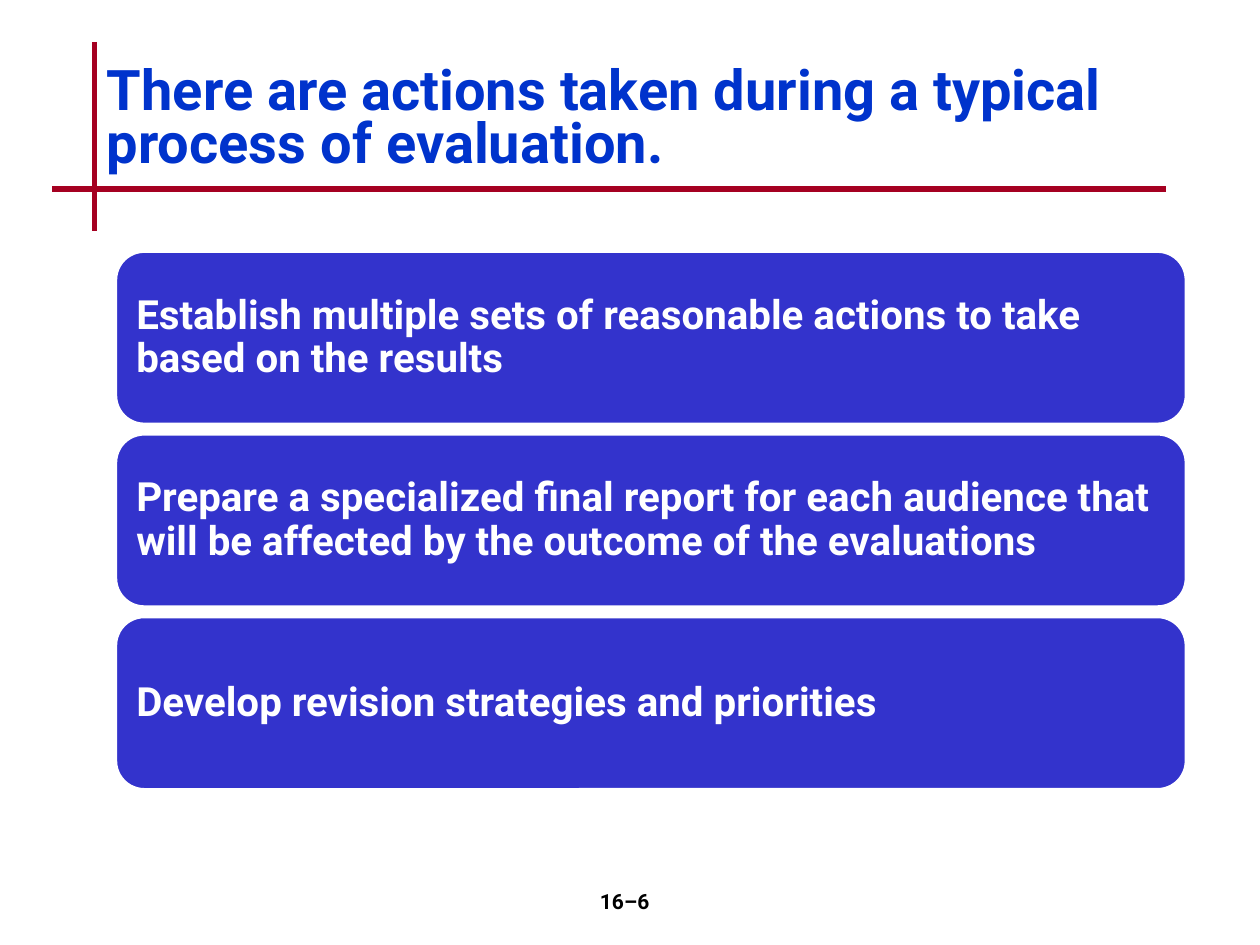
from lxml.etree import SubElement
from pptx import Presentation
from pptx.dml.color import RGBColor
from pptx.enum.shapes import MSO_CONNECTOR as Connector, MSO_SHAPE as Shape
from pptx.enum.text import MSO_ANCHOR as Anchor, PP_ALIGN as Align
from pptx.oxml.ns import qn
from pptx.util import Pt

FONT = "Roboto"
ACTIONS = [
    "Establish multiple sets of reasonable actions to take based on the results",
    "Prepare a specialized final report for each audience that will be affected "
    "by the outcome of the evaluations",
    "Develop revision strategies and priorities",
]
CARD_TOP, CARD_HEIGHT, CARD_PITCH = 143.5, 99, 104.4


def color(value):
    return RGBColor.from_string(value)


def write(shape, text, size, fill, align=Align.LEFT, anchor=Anchor.MIDDLE,
          spacing=1.0, inset=3.6):
    frame = shape.text_frame
    frame.word_wrap = True
    frame.vertical_anchor = anchor
    frame.margin_left = frame.margin_right = Pt(7.2)
    frame.margin_top = frame.margin_bottom = Pt(inset)
    para = frame.paragraphs[0]
    para.alignment = align
    para.line_spacing = spacing
    span = para.add_run()
    span.text = text
    span.font.name = FONT
    span.font.size = Pt(size)
    span.font.bold = True
    span.font.color.rgb = color(fill)


def add_text(page, left, top, width, height, text, **format):
    box = page.shapes.add_textbox(Pt(left), Pt(top), Pt(width), Pt(height))
    write(box, text, **format)


def add_rule(page, left, top, right, bottom):
    rule = page.shapes.add_connector(
        Connector.STRAIGHT, Pt(left), Pt(top), Pt(right), Pt(bottom))
    rule.line.color.rgb = color("A50021")
    rule.line.width = Pt(3)
    SubElement(rule._element.spPr, qn("a:effectLst"))


def add_card(page, top, text):
    card = page.shapes.add_shape(
        Shape.ROUNDED_RECTANGLE, Pt(66), Pt(top), Pt(612), Pt(CARD_HEIGHT))
    card.shadow.inherit = False
    card.fill.solid()
    card.fill.fore_color.rgb = color("3333CC")
    card.line.color.rgb = color("FFFFFF")
    card.line.width = Pt(2)
    write(card, text, size=23, fill="FFFFFF", spacing=0.9, inset=7.2)


def main():
    deck = Presentation()
    deck.slide_width, deck.slide_height = Pt(720), Pt(540)
    page = deck.slides.add_slide(deck.slide_layouts[6])
    add_rule(page, 54, 24, 54, 132)
    add_rule(page, 30, 108, 666, 108)
    for index, action in enumerate(ACTIONS):
        add_card(page, CARD_TOP + index * CARD_PITCH, action)
    add_text(page, 54, 24, 612, 90,
             "There are actions taken during a typical process of evaluation.",
             size=32, fill="0033CC", spacing=0.8)
    add_text(page, 282, 504, 150, 36, "16–6", size=12, fill="000000",
             align=Align.CENTER, anchor=Anchor.TOP)
    deck.save("out.pptx")


if __name__ == "__main__":
    main()
